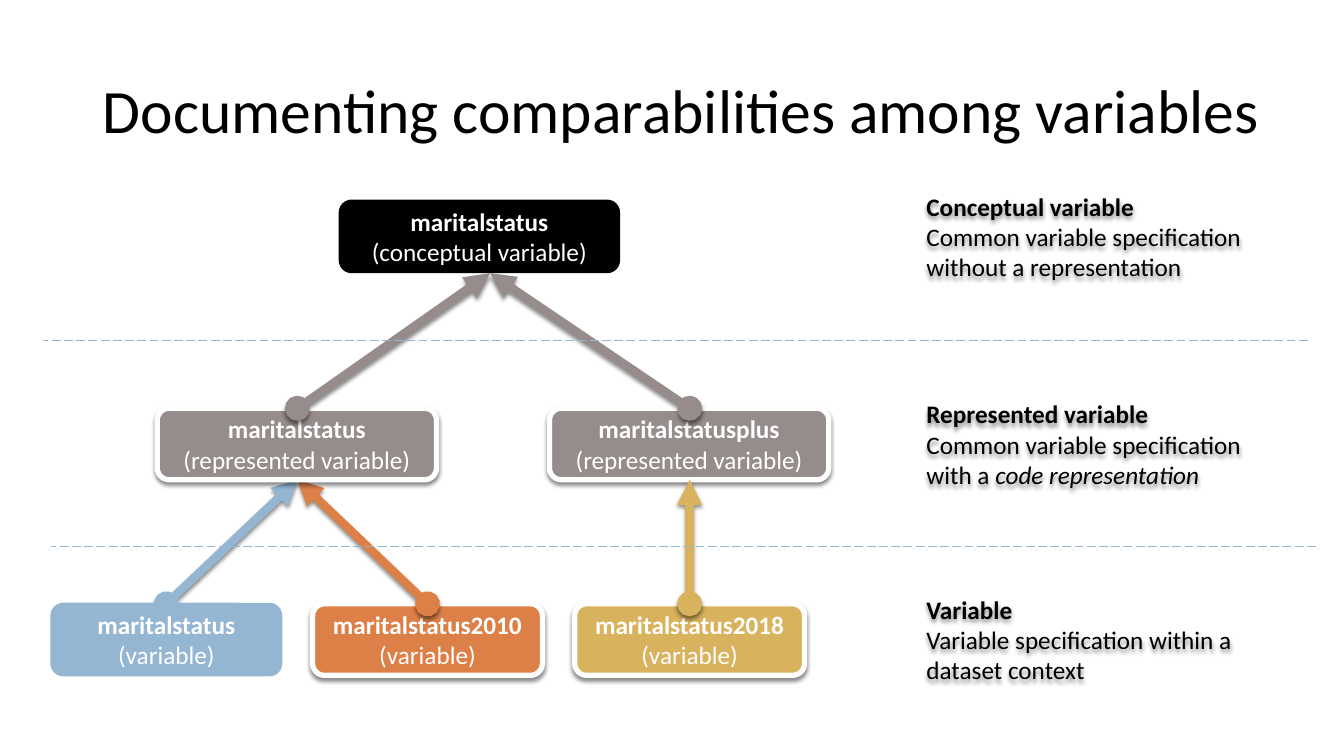
"""Build a slide on how variables are compared at three levels."""
from lxml import etree
from pptx import Presentation
from pptx.dml.color import RGBColor
from pptx.enum.dml import MSO_LINE
from pptx.enum.shapes import MSO_CONNECTOR, MSO_SHAPE
from pptx.enum.text import MSO_ANCHOR, MSO_AUTO_SIZE, PP_ALIGN
from pptx.oxml.ns import qn
from pptx.util import Inches, Pt

ROUND = MSO_SHAPE.ROUNDED_RECTANGLE
STRAIGHT = MSO_CONNECTOR.STRAIGHT
DASH = MSO_LINE.LONG_DASH
MIDDLE = MSO_ANCHOR.MIDDLE
LEFT, CENTER = PP_ALIGN.LEFT, PP_ALIGN.CENTER
NO_FIT = MSO_AUTO_SIZE.NONE

HUES = {"black": "000000", "white": "FFFFFF", "grey": "968C8C",
        "blue": "94B6D2", "orange": "DD8047", "gold": "D8B25C"}
COLORS = {name: RGBColor.from_string(hue) for name, hue in HUES.items()}
TOP, MID, LOW = 1.99, 4.05, 5.99
HIGH = 0.71
WIDE, SLIM = 2.77, 2.28


def write(para, text, hue, size=18, bold=False, italic=False):
    run = para.add_run()
    run.text = text
    font = run.font
    font.name, font.size = "Calibri", Pt(size)
    font.bold, font.italic = bold, italic
    font.color.rgb = COLORS[hue]


def shade(shape, cast=True):
    props = shape.element.spPr
    effect = etree.SubElement(props, qn("a:effectLst"))
    if cast:
        outer = etree.SubElement(effect, qn("a:outerShdw"), blurRad="38100",
                                 dist="30000", dir="5400000", rotWithShape="0")
        color = etree.SubElement(outer, qn("a:srgbClr"), val=HUES["black"])
        etree.SubElement(color, qn("a:alpha"), val="45000")


deck = Presentation()
deck.slide_width, deck.slide_height = Inches(13.33), Inches(7.5)
slide = deck.slides.add_slide(deck.slide_layouts[5])
shapes = slide.shapes

title = shapes.title
title.left, title.top = Inches(0.92), Inches(0.4)
title.width, title.height = Inches(11.85), Inches(1.45)
frame = title.text_frame
frame.auto_size, frame.vertical_anchor = NO_FIT, MIDDLE
para = frame.paragraphs[0]
para.alignment, para.line_spacing = LEFT, 0.9
write(para, "Documenting comparabilities among variables", "black", 44)

layers = [
    ([(3.37, TOP, WIDE, "maritalstatus", "conceptual variable", "black", False),
      (3.1, LOW, SLIM, "maritalstatus2010", "variable", "orange", True)],
     [(4.24, LOW, 2.95, MID + HIGH, "orange"),
      (1.65, LOW, 2.95, MID + HIGH, "blue")]),
    ([(1.56, MID, WIDE, "maritalstatus", "represented variable", "grey", True),
      (0.51, LOW, SLIM, "maritalstatus", "variable", "blue", False),
      (5.7, LOW, SLIM, "maritalstatus2018", "variable", "gold", True),
      (5.45, MID, WIDE, "maritalstatusplus", "represented variable", "grey", True)],
     [(2.95, MID, 4.86, TOP + HIGH + 0.01, "grey"),
      (6.84, LOW, 6.84, MID + HIGH, "gold"),
      (6.84, MID, 4.86, TOP + HIGH + 0.01, "grey")]),
]
for boxes, arrows in layers:
    for x, y, width, name, kind, hue, raised in boxes:
        box = shapes.add_shape(ROUND, Inches(x), Inches(y), Inches(width), Inches(HIGH))
        box.fill.solid()
        box.fill.fore_color.rgb = COLORS[hue]
        box.line.color.rgb = COLORS["white" if raised else hue]
        box.line.width = Pt(3.75 if raised else 1.5)
        shade(box, raised)
        frame = box.text_frame
        frame.word_wrap, frame.vertical_anchor = True, MIDDLE
        para = frame.paragraphs[0]
        para.alignment = CENTER
        write(para, name, "white", bold=True)
        para.add_line_break()
        write(para, f"({kind})", "white")
    for x, y, end_x, end_y, hue in arrows:
        arrow = shapes.add_connector(STRAIGHT, Inches(x), Inches(y),
                                     Inches(end_x), Inches(end_y))
        arrow.line.color.rgb = COLORS[hue]
        arrow.line.width = Pt(6)
        line = arrow.element.spPr.find(qn("a:ln"))
        etree.SubElement(line, qn("a:headEnd"), type="oval")
        etree.SubElement(line, qn("a:tailEnd"), type="triangle")
        shade(arrow)

for x, y in [(0.43, 3.38), (0.51, 5.42)]:
    rule = shapes.add_connector(STRAIGHT, Inches(x + 12.54), Inches(y),
                                Inches(x), Inches(y))
    rule.line.color.rgb = COLORS["blue"]
    rule.line.width = Pt(0.79)
    rule.line.dash_style = DASH
    shade(rule, False)

notes = [
    (1.74, "Conceptual variable",
     "Common variable specification without a representation", ""),
    (3.8, "Represented variable",
     "Common variable specification with a ", "code representation"),
    (5.74, "Variable", "Variable specification within a dataset context", ""),
]
for y, head, body, stress in notes:
    note = shapes.add_textbox(Inches(9.09), Inches(y), Inches(3.46), Inches(1.21))
    shade(note)
    frame = note.text_frame
    frame.word_wrap, frame.vertical_anchor = True, MIDDLE
    write(frame.paragraphs[0], head, "black", bold=True)
    para = frame.add_paragraph()
    write(para, body, "black")
    if stress:
        write(para, stress, "black", italic=True)

deck.save("out.pptx")
